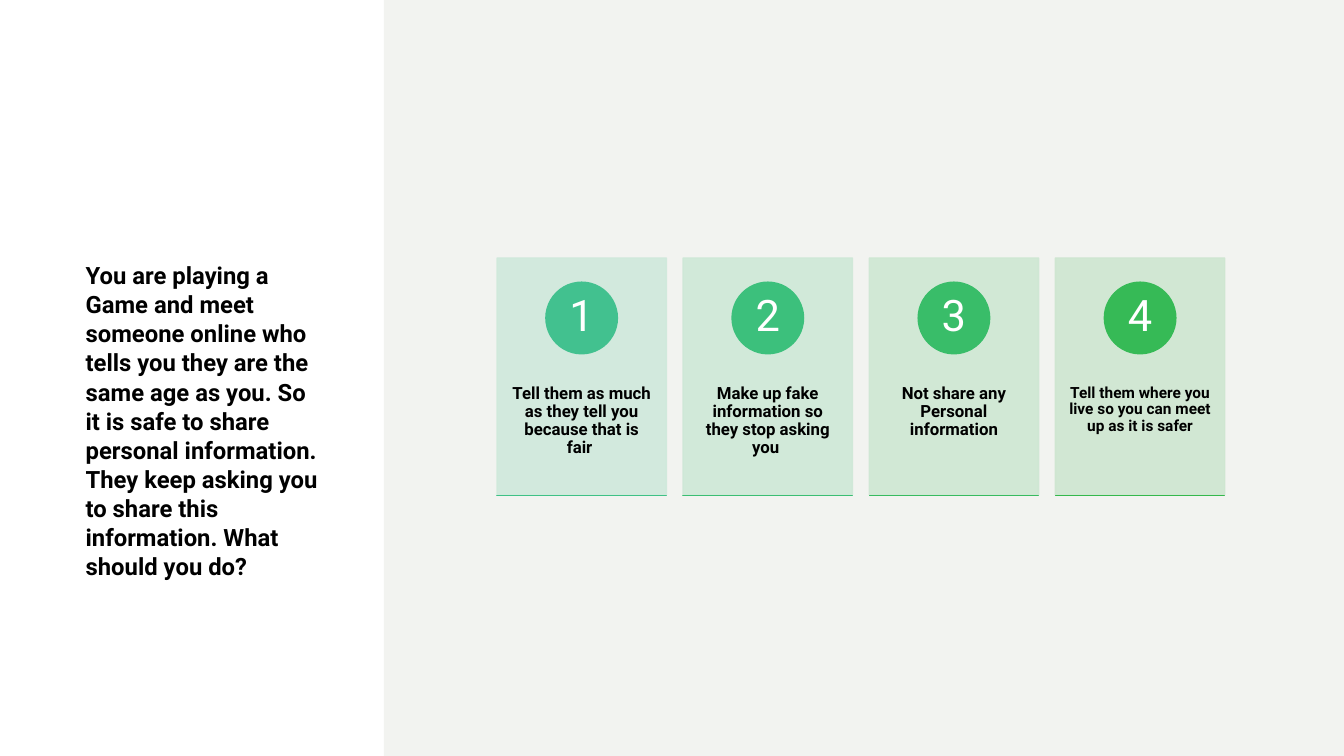
from typing import Any, NamedTuple

from lxml.etree import SubElement
from pptx import Presentation
from pptx.dml.color import RGBColor
from pptx.enum.shapes import MSO_SHAPE as Preset
from pptx.enum.text import MSO_ANCHOR as Anchor, MSO_AUTO_SIZE as AutoSize, PP_ALIGN as Align
from pptx.oxml.ns import qn
from pptx.util import Emu, Inches, Pt

SLIDE_WIDTH, SLIDE_HEIGHT = Inches(13.333), Inches(7.5)
BLACK = RGBColor(0x00, 0x00, 0x00)
WHITE = RGBColor(0xFF, 0xFF, 0xFF)
PANEL_GREY = RGBColor(0xF2, 0xF3, 0xF0)

QUESTION = (
    "You are playing a Game and meet someone online who tells you they are the same age as you. "
    "So it is safe to share personal information. They keep asking you to share this information. "
    "What should you do?"
)


class Box(NamedTuple):
    """Left, top, width and height in percent of the slide's size."""
    left: float
    top: float
    width: float
    height: float

    def lengths(self) -> tuple[Emu, Emu, Emu, Emu]:
        return across(self.left), down(self.top), across(self.width), down(self.height)


class Answer(NamedTuple):
    wording: str
    size: int
    card: RGBColor
    circle: RGBColor
    baseline: RGBColor


ANSWERS = [
    Answer("Tell them as much as they tell you because that is fair ", 12,
           RGBColor(0xCF, 0xE9, 0xDB), RGBColor(0x42, 0xC1, 0x8F), RGBColor(0x3F, 0xC1, 0x86)),
    Answer("Make up fake information so they stop asking you ", 12,
           RGBColor(0xCE, 0xE8, 0xD7), RGBColor(0x3C, 0xC0, 0x7C), RGBColor(0x3B, 0xBE, 0x73)),
    Answer("Not share any Personal information", 12,
           RGBColor(0xCE, 0xE7, 0xD3), RGBColor(0x39, 0xBD, 0x69), RGBColor(0x37, 0xBB, 0x5F)),
    Answer("Tell them where you live so you can meet up as it is safer", 11,
           RGBColor(0xCE, 0xE6, 0xD0), RGBColor(0x36, 0xBA, 0x56), RGBColor(0x34, 0xB8, 0x4C)),
]

# Card columns, in percent of the slide's width
FIRST_CARD, CARD_WIDTH, CARD_PITCH = 36.98, 12.6, 13.85


def across(percent: float) -> Emu:
    return Emu(round(SLIDE_WIDTH * percent / 100))


def down(percent: float) -> Emu:
    return Emu(round(SLIDE_HEIGHT * percent / 100))


def apply(target: Any, values: dict[str, Any]) -> None:
    for name, value in values.items():
        setattr(target, name, value)


def write(frame: Any, wording: str, size: int, color: RGBColor, bold: bool,
          frame_format: dict[str, Any], paragraph_format: dict[str, Any]) -> None:
    apply(frame, {"word_wrap": True, "auto_size": AutoSize.NONE} | frame_format)
    paragraph = frame.paragraphs[0]
    apply(paragraph, paragraph_format)
    run = paragraph.add_run()
    run.text = wording
    apply(run.font, {"name": "Roboto", "size": Pt(size), "bold": bold})
    run.font.color.rgb = color


def draw(shapes: Any, preset: Preset, box: Box, color: RGBColor,
         outlined: bool = True, opacity: int = 100) -> None:
    shape = shapes.add_shape(preset, *box.lengths())
    shape.shadow.inherit = False
    shape.fill.solid()
    shape.fill.fore_color.rgb = color
    if outlined:
        shape.line.color.rgb = color
        shape.line.width = Pt(1)
    else:
        shape.line.fill.background()
    if opacity < 100:
        for tint in shape._element.spPr.iter(qn("a:srgbClr")):
            SubElement(tint, qn("a:alpha"), val=str(opacity * 1000))


def label(shapes: Any, box: Box, wording: str, size: int, color: RGBColor, bold: bool,
          anchor: Anchor, side: float, end: float) -> None:
    frame = shapes.add_textbox(*box.lengths()).text_frame
    write(frame, wording, size, color, bold,
          {"vertical_anchor": anchor,
           "margin_left": across(side), "margin_right": across(side),
           "margin_top": down(end), "margin_bottom": down(end)},
          {"alignment": Align.CENTER, "line_spacing": 0.9})


def draw_answer(shapes: Any, column: int, answer: Answer) -> None:
    left = FIRST_CARD + column * CARD_PITCH

    def centred(top: float, width: float, height: float) -> Box:
        return Box(left + (CARD_WIDTH - width) / 2, top, width, height)

    # Card and wording
    draw(shapes, Preset.RECTANGLE, centred(34.13, CARD_WIDTH, 31.33), answer.card, opacity=90)
    label(shapes, centred(46.13, CARD_WIDTH, 18.8), answer.wording, answer.size,
          BLACK, True, Anchor.TOP, side=0.98, end=4.8)
    # Numbered circle
    draw(shapes, Preset.OVAL, centred(37.33, 5.32, 9.47), answer.circle)
    label(shapes, centred(38.67, 3.75, 6.67), str(column + 1), 31,
          WHITE, False, Anchor.MIDDLE, side=0.45, end=0.13)
    # Rule along the bottom edge
    draw(shapes, Preset.RECTANGLE, centred(65.55, CARD_WIDTH, 0), answer.baseline)


def main() -> None:
    deck = Presentation()
    apply(deck, {"slide_width": SLIDE_WIDTH, "slide_height": SLIDE_HEIGHT})
    slide = deck.slides.add_slide(deck.slide_layouts[5])

    # Question
    question = slide.shapes.title
    places = Box(5.62, 30.67, 19.05, 46.8).lengths()
    apply(question, dict(zip(("left", "top", "width", "height"), places)))
    write(question.text_frame, QUESTION, 17, BLACK, True,
          {"vertical_anchor": Anchor.BOTTOM},
          {"alignment": Align.LEFT, "line_spacing": 1.02})

    # Answer panel
    draw(slide.shapes, Preset.RECTANGLE, Box(28.57, 0, 71.43, 100), PANEL_GREY, outlined=False)
    answers = slide.shapes.add_group_shape().shapes
    for column, answer in enumerate(ANSWERS):
        draw_answer(answers, column, answer)

    deck.save("out.pptx")


if __name__ == "__main__":
    main()
